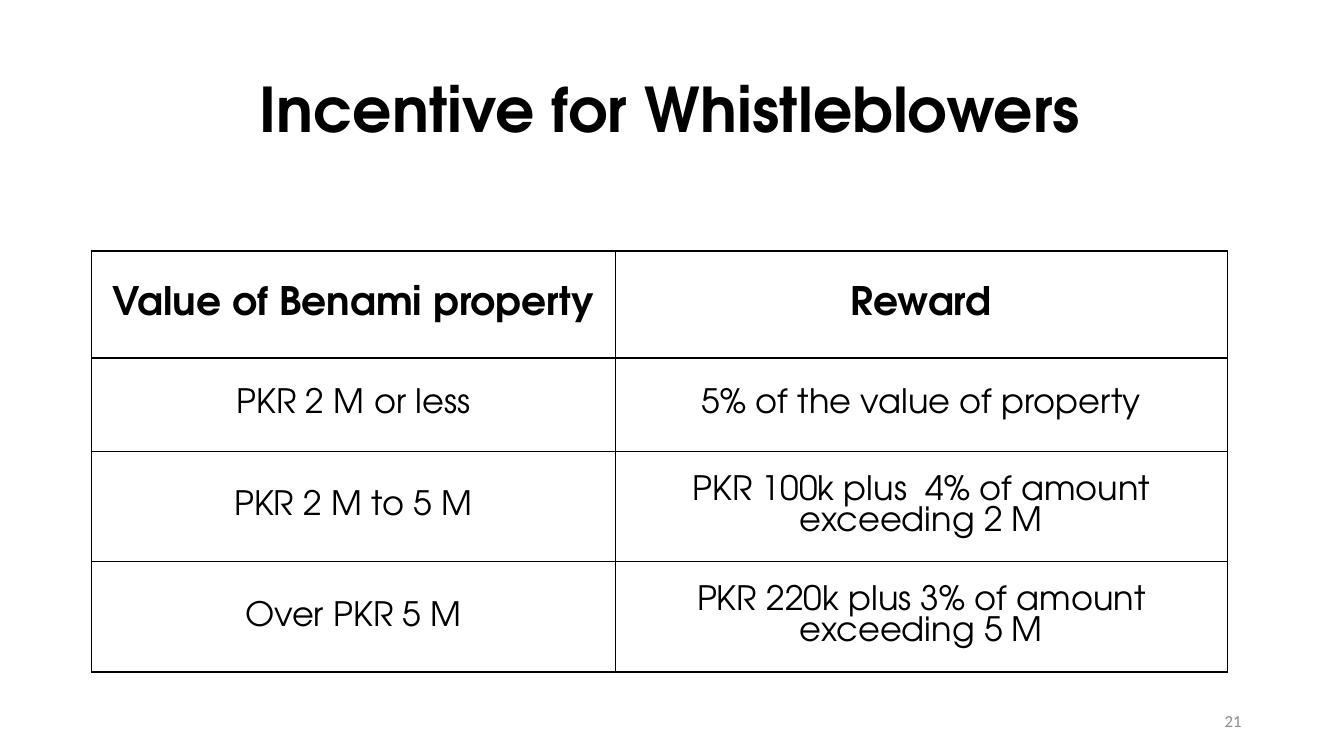
from lxml import etree
from pptx import Presentation
from pptx.dml.color import RGBColor
from pptx.enum.text import MSO_ANCHOR, PP_ALIGN
from pptx.oxml.ns import qn
from pptx.util import Pt

PX = 9525
MIDDLE = MSO_ANCHOR.MIDDLE
CENTER = PP_ALIGN.CENTER
RIGHT = PP_ALIGN.RIGHT
FONT = "TeX Gyre Adventor"
COLORS = {"ink": "000000", "paper": "FFFFFF", "muted": "8C8C8C"}

COLS = [499, 583]
ROWS = [102, 89, 105, 105]
REWARDS = [
    ("Value of Benami property", "Reward"),
    ("PKR 2 M or less", "5% of the value of property"),
    ("PKR 2 M to 5 M", "PKR 100k plus  4% of amount exceeding 2 M"),
    ("Over PKR 5 M", "PKR 220k plus 3% of amount exceeding 5 M"),
]


def color(name):
    return RGBColor.from_string(COLORS[name])


def write(frame, text, size, font=FONT, ink="ink", bold=False,
          align=CENTER, spacing=None):
    frame.word_wrap = True
    para = frame.paragraphs[0]
    para.alignment = align
    if spacing:
        para.line_spacing = spacing
    run = para.add_run()
    run.text = text
    run.font.name = font
    run.font.size = Pt(size)
    run.font.bold = bold
    run.font.color.rgb = color(ink)


def add_title(slide, text, left, top, width, height):
    title = slide.shapes.title
    title.left, title.top = left * PX, top * PX
    title.width, title.height = width * PX, height * PX
    title.text_frame.vertical_anchor = MIDDLE
    write(title.text_frame, text, 44, bold=True, spacing=0.9)


def add_border(cell):
    props = cell._tc.get_or_add_tcPr()
    for side in ("lnL", "lnR", "lnT", "lnB"):
        line = etree.SubElement(props, qn(f"a:{side}"), w=str(Pt(1)))
        fill = etree.SubElement(line, qn("a:solidFill"))
        etree.SubElement(fill, qn("a:srgbClr"), val=COLORS["ink"])


def add_grid(slide, data, left, top):
    frame = slide.shapes.add_table(
        len(ROWS), len(COLS), left * PX, top * PX,
        sum(COLS) * PX, sum(ROWS) * PX)
    table = frame.table
    table.first_row = table.horz_banding = False
    for col, width in zip(table.columns, COLS):
        col.width = width * PX
    for i, (row, height) in enumerate(zip(table.rows, ROWS)):
        row.height = height * PX
        for cell, text in zip(row.cells, data[i]):
            add_border(cell)
            cell.fill.solid()
            cell.fill.fore_color.rgb = color("paper")
            cell.vertical_anchor = MIDDLE
            write(cell.text_frame, text, 24 if i else 28, bold=i == 0)


def add_number(slide, text, left, top, width, height):
    box = slide.shapes.add_textbox(
        left * PX, top * PX, width * PX, height * PX)
    box.text_frame.vertical_anchor = MIDDLE
    write(box.text_frame, text, 12, font="Calibri", ink="muted", align=RIGHT)


def main():
    deck = Presentation()
    deck.slide_width, deck.slide_height = 1280 * PX, 720 * PX
    slide = deck.slides.add_slide(deck.slide_layouts[5])
    add_title(slide, "Incentive for Whistleblowers", 206, 38, 864, 139)
    add_grid(slide, REWARDS, 87, 239)
    add_number(slide, "21", 904, 667, 288, 38)
    deck.save("out.pptx")


if __name__ == "__main__":
    main()
